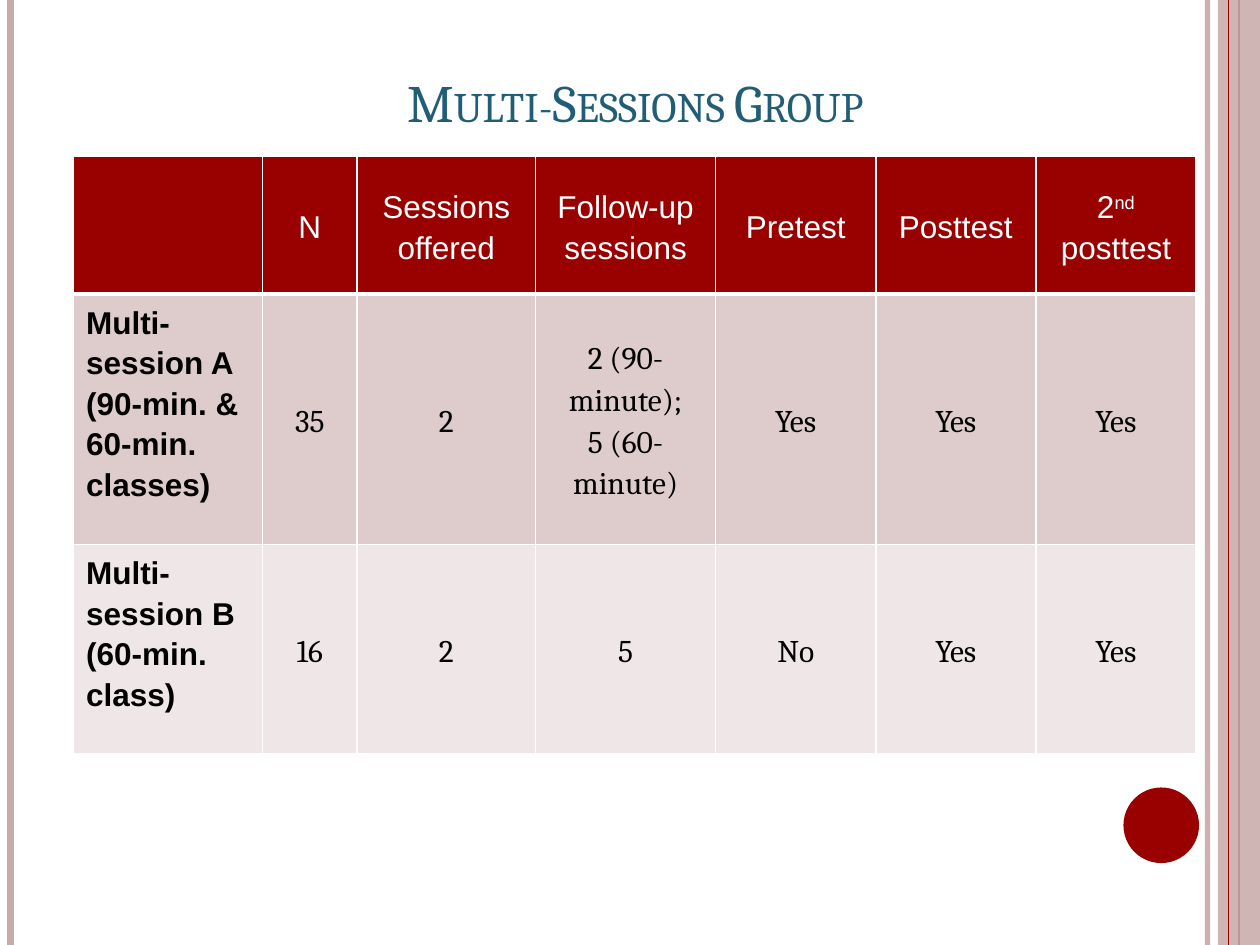
from lxml.etree import SubElement
from pptx import Presentation
from pptx.dml.color import RGBColor
from pptx.enum.shapes import MSO_CONNECTOR as Connector, MSO_SHAPE as Shape
from pptx.enum.text import MSO_ANCHOR as Anchor, PP_ALIGN as Align
from pptx.oxml.ns import qn
from pptx.util import Pt

COLOURS = {"red": "990000", "rose": "CAABAB", "title": "215D77", "white": "FFFFFF",
           "black": "000000", "band_a": "DECCCC", "band_b": "EFE7E7"}
WIDTH, HEIGHT = 720, 540

TITLE = "Multi-Sessions Group"
# \n starts a paragraph, \v breaks a line, ^...^ is superscript
HEADER = ["", "N", "Sessions offered", "Follow-up\nsessions", "Pretest", "Posttest",
          "2^nd^ posttest"]
ROWS = [
    ["Multi-session A\n(90-min. & \v60-min. classes)", "35", "2",
     "2 (90- minute);\n5 (60-minute)", "Yes", "Yes", "Yes"],
    ["Multi-session B\n(60-min. class)", "16", "2", "5", "No", "Yes", "Yes"],
]
COLUMN_WIDTHS = [108, 54, 102, 103, 91.5, 91.5, 91.5]
ROW_HEIGHTS = [78.5, 143.3, 119.5]
ROW_FILLS = ["red", "band_a", "band_b"]
TABLE_LEFT, TABLE_TOP = 42, 89.5

# x, width, colour, opacity in percent
BACK_RULES = [(690, 3, "rose", 93), (6, 4.5, "rose", 100), (708, 1.5, "red", 100)]
FRONT_RULE = (702, 0.75, "red", 100)


def rgb(name):
    return RGBColor.from_string(COLOURS[name])


def set_opacity(properties, percent):
    if percent < 100:
        colour = next(properties.iter(qn("a:srgbClr")))
        SubElement(colour, qn("a:alpha"), val=str(percent * 1000))


def add_rule(page, x, width, colour, opacity):
    rule = page.shapes.add_connector(Connector.STRAIGHT, Pt(x), 0, Pt(x), Pt(HEIGHT))
    rule.line.width = Pt(width)
    rule.line.color.rgb = rgb(colour)
    properties = rule.element.spPr
    set_opacity(properties, opacity)
    SubElement(properties, qn("a:effectLst"))


def add_block(page, kind, left, top, width, height, colour, opacity=100):
    block = page.shapes.add_shape(kind, Pt(left), Pt(top), Pt(width), Pt(height))
    block.shadow.inherit = False
    block.fill.solid()
    block.fill.fore_color.rgb = rgb(colour)
    block.line.fill.background()
    set_opacity(block.element.spPr, opacity)


def write(frame, text, font="Cambria", size=18, colour="black", bold=False,
          align=Align.CENTER, spacing=1.0, small_caps=False):
    for number, paragraph in enumerate(text.split("\n")):
        para = frame.add_paragraph() if number else frame.paragraphs[0]
        para.alignment = align
        para.line_spacing = spacing
        for part, piece in enumerate(paragraph.split("^")):
            for row, line in enumerate(piece.split("\v")):
                if row:
                    para.add_line_break()
                span = para.add_run()
                span.text = line
                span.font.name = font
                span.font.size = Pt(size)
                span.font.bold = bold
                span.font.color.rgb = rgb(colour)
                properties = span.font._element
                if part % 2:
                    properties.set("baseline", "30000")
                if small_caps:
                    properties.set("cap", "small")


def style_cell(cell, fill, bottom):
    """Give the cell white borders and a plain fill."""
    properties = cell._tc.get_or_add_tcPr()
    for side, width in (("L", 1), ("R", 1), ("T", 1), ("B", bottom)):
        border = SubElement(properties, qn(f"a:ln{side}"), w=str(Pt(width)))
        paint = SubElement(border, qn("a:solidFill"))
        SubElement(paint, qn("a:srgbClr"), val=COLOURS["white"])
    cell.fill.solid()
    cell.fill.fore_color.rgb = rgb(fill)


def add_sessions_table(page):
    grid = [HEADER] + ROWS
    table = page.shapes.add_table(
        len(grid), len(HEADER), Pt(TABLE_LEFT), Pt(TABLE_TOP),
        Pt(sum(COLUMN_WIDTHS)), Pt(sum(ROW_HEIGHTS))).table
    for column, width in zip(table.columns, COLUMN_WIDTHS):
        column.width = Pt(width)
    for r, texts in enumerate(grid):
        table.rows[r].height = Pt(ROW_HEIGHTS[r])
        for c, text in enumerate(texts):
            cell = table.cell(r, c)
            is_header, is_label = r == 0, r > 0 and c == 0
            style_cell(cell, ROW_FILLS[r], bottom=3 if is_header else 1)
            if not is_label:
                cell.vertical_anchor = Anchor.MIDDLE
                cell.margin_left = cell.margin_right = Pt(5)
                cell.margin_top = cell.margin_bottom = 0
            if text:
                write(cell.text_frame, text, spacing=1.15, bold=is_label,
                      font="Arial" if is_header or is_label else "Cambria",
                      colour="white" if is_header else "black",
                      align=Align.LEFT if is_label else Align.CENTER)


def main():
    deck = Presentation()
    deck.slide_width, deck.slide_height = Pt(WIDTH), Pt(HEIGHT)
    page = deck.slides.add_slide(deck.slide_layouts[6])

    for rule in BACK_RULES:
        add_rule(page, *rule)
    add_block(page, Shape.RECTANGLE, 696, 0, 24, HEIGHT, "rose", 87)
    add_rule(page, *FRONT_RULE)
    add_block(page, Shape.OVAL, 642, 450, 43.2, 43.2, "red")

    box = page.shapes.add_textbox(Pt(42), Pt(1.5), Pt(642), Pt(78))
    box.text_frame.word_wrap = True
    box.text_frame.vertical_anchor = Anchor.BOTTOM
    write(box.text_frame, TITLE, size=30, colour="title", small_caps=True)

    add_sessions_table(page)
    deck.save("out.pptx")


if __name__ == "__main__":
    main()
